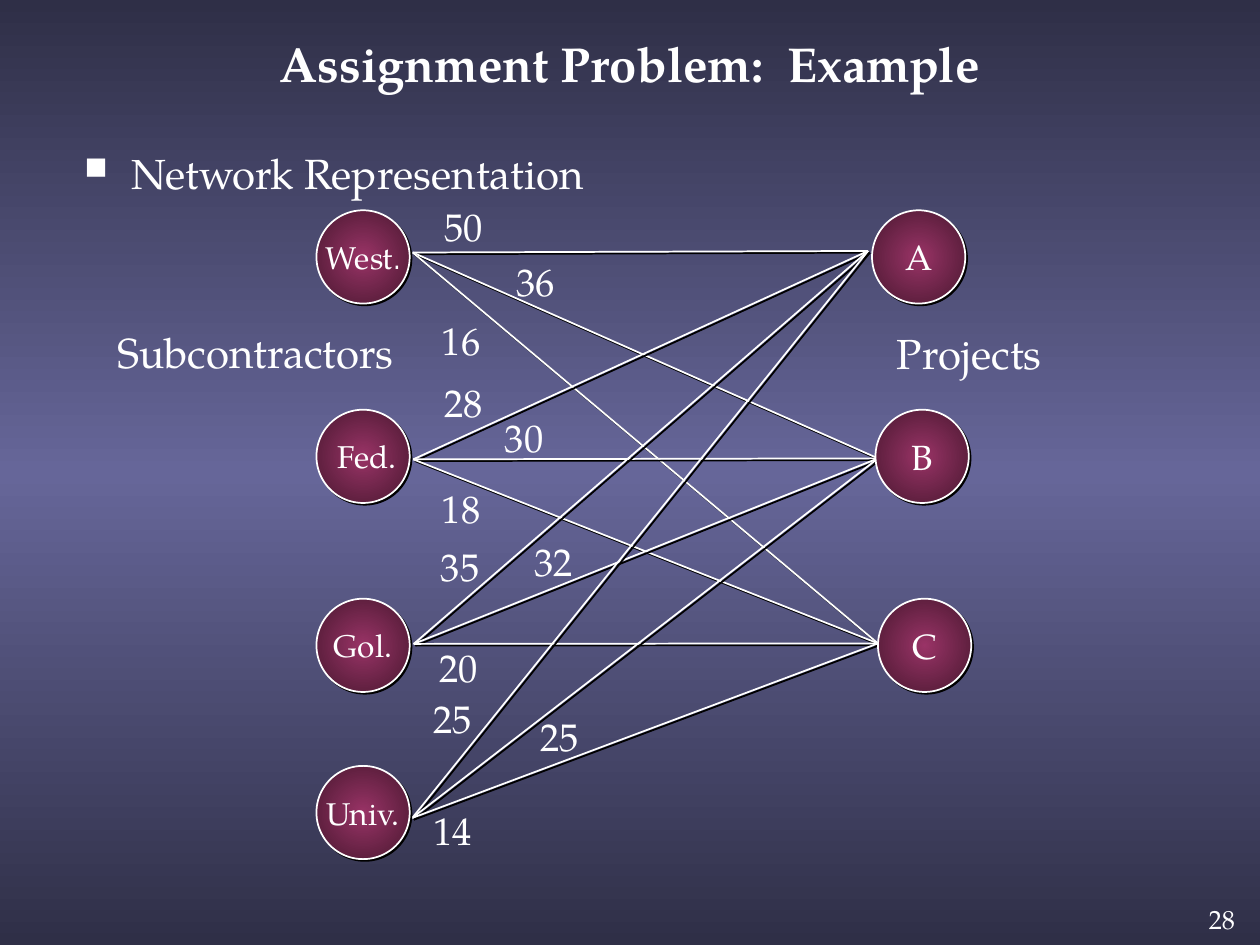
from copy import deepcopy
from itertools import product

from lxml import etree
from pptx import Presentation
from pptx import util as u
from pptx.dml.color import RGBColor
from pptx.enum import shapes, text
from pptx.oxml import parse_xml
from pptx.oxml.ns import nsdecls, qn

WHITE = RGBColor(0xFF, 0xFF, 0xFF)
NIGHT = RGBColor(0x2F, 0x2F, 0x47)
INDIGO = RGBColor(0x66, 0x66, 0x99)
PLUM = RGBColor(0x99, 0x33, 0x66)
DARK_PLUM = RGBColor(0x47, 0x18, 0x2F)
FONT = "TeX Gyre Pagella"

SHADOW = parse_xml(
    f'<a:effectLst {nsdecls("a")}><a:outerShdw dist="17961" dir="2700000" algn="ctr" '
    'rotWithShape="0"><a:srgbClr val="000000"/></a:outerShdw></a:effectLst>'
)
VERTICAL = '<a:lin ang="5400000" scaled="0"/>'
FROM_CENTRE = '<a:path path="circle"><a:fillToRect l="50000" t="50000" r="50000" b="50000"/></a:path>'


def paint_gradient(fill, element, colors, direction):
    fill.gradient()
    step = 100000 // (len(colors) - 1)
    stops = "".join(
        f'<a:gs pos="{index * step}"><a:srgbClr val="{color}"/></a:gs>'
        for index, color in enumerate(colors)
    )
    old = element.find(".//" + qn("a:gradFill"))
    old.getparent().replace(old, parse_xml(
        f'<a:gradFill {nsdecls("a")} rotWithShape="1"><a:gsLst>{stops}</a:gsLst>{direction}</a:gradFill>'
    ))


def write(shape, words, size, align=text.PP_ALIGN.LEFT, bold=False):
    para = shape.text_frame.paragraphs[0]
    para.text = words
    para.alignment = align
    font = para.runs[0].font
    font.name, font.size, font.bold = FONT, u.Pt(size), bold
    font.color.rgb = WHITE
    return para


deck = Presentation()
deck.slide_width, deck.slide_height = u.Cm(25.4), u.Cm(19.05)
page = deck.slides.add_slide(deck.slide_layouts[5])
paint_gradient(page.background.fill, page.element, [NIGHT, INDIGO, NIGHT], VERTICAL)

title = page.shapes.title
title.left, title.top, title.width, title.height = u.Cm(1.47), u.Cm(0.13), u.Cm(22.45), u.Cm(2.26)
title.text_frame.vertical_anchor = text.MSO_ANCHOR.MIDDLE
write(title, "Assignment Problem:  Example", 28, text.PP_ALIGN.CENTER, True)

heading = page.shapes.add_textbox(u.Cm(1.45), u.Cm(2.84), u.Cm(12.83), u.Cm(1.78))
heading.text_frame.word_wrap = True
para = write(heading, "Network Representation", 24)
para.space_before = u.Pt(4.8)
properties = para._p.get_or_add_pPr()
properties.set("marL", str(u.Cm(0.95)))
properties.set("indent", str(-u.Cm(0.95)))
bullet_color = etree.SubElement(properties, qn("a:buClr"))
etree.SubElement(bullet_color, qn("a:srgbClr"), val=str(WHITE))
etree.SubElement(properties, qn("a:buSzPct"), val="75000")
etree.SubElement(properties, qn("a:buChar"), char="■")

subcontractor_ports = [(8.32, 5.09), (8.33, 9.26), (8.34, 12.98), (8.31, 16.49)]
project_ports = [(17.5, 5.06), (17.7, 9.24), (17.7, 12.97)]
for start, end in product(subcontractor_ports, project_ports):
    edge = page.shapes.add_connector(
        shapes.MSO_CONNECTOR.STRAIGHT, *(u.Cm(value) for value in start + end)
    )
    edge.line.color.rgb = WHITE
    edge.line.width = u.Pt(1)
    edge._element.spPr.append(deepcopy(SHADOW))

diameter = u.Cm(1.88)
nodes = [
    ("West", 6.38, 4.24, 18), (" Fed.", 6.38, 8.26, 18),
    ("Gol.", 6.38, 12.07, 18), ("Univ.", 6.38, 15.44, 18),
    ("A", 17.58, 4.24, 20), ("B", 17.65, 8.26, 20), ("C", 17.7, 12.07, 20),
]
for name, left, top, size in nodes:
    node = page.shapes.add_shape(
        shapes.MSO_SHAPE.OVAL, u.Cm(left), u.Cm(top), diameter, diameter
    )
    paint_gradient(node.fill, node._element, [PLUM, DARK_PLUM], FROM_CENTRE)
    node.line.color.rgb = WHITE
    node.line.width = u.Pt(1)
    node._element.spPr.append(deepcopy(SHADOW))
    node.text_frame.word_wrap = False
    node.text_frame.vertical_anchor = text.MSO_ANCHOR.MIDDLE
    para = write(node, name, size, text.PP_ALIGN.CENTER)
    if name == "West":
        span = para.add_run()
        span.text = "."
        span.font.name, span.font.size = "Arial Narrow", u.Pt(size)
        span.font.color.rgb = WHITE

costs = [
    ("50", 8.71, 3.96), ("36", 10.16, 5.08), ("16", 8.66, 6.27),
    ("28", 8.71, 7.52), ("30", 9.93, 8.23), ("18", 8.66, 9.65),
    ("35", 8.64, 10.82), ("32", 10.52, 10.72), ("20", 8.61, 12.85),
    ("25", 8.48, 13.89), ("25", 10.64, 14.25), ("14", 8.48, 16.15),
]
labels = [(*cost, 1.32, 1.19, 22) for cost in costs] + [
    ("Projects", 17.83, 6.48, 3.43, 1.27, 24),
    ("Subcontractors", 2.11, 6.45, 6.12, 1.27, 24),
    ("28", 24.12, 18.08, 1.04, 0.89, 15),
]
for words, left, top, width, height, size in labels:
    box = page.shapes.add_textbox(u.Cm(left), u.Cm(top), u.Cm(width), u.Cm(height))
    box.text_frame.word_wrap = False
    box.text_frame.auto_size = text.MSO_AUTO_SIZE.SHAPE_TO_FIT_TEXT
    write(box, words, size)

deck.save("out.pptx")
